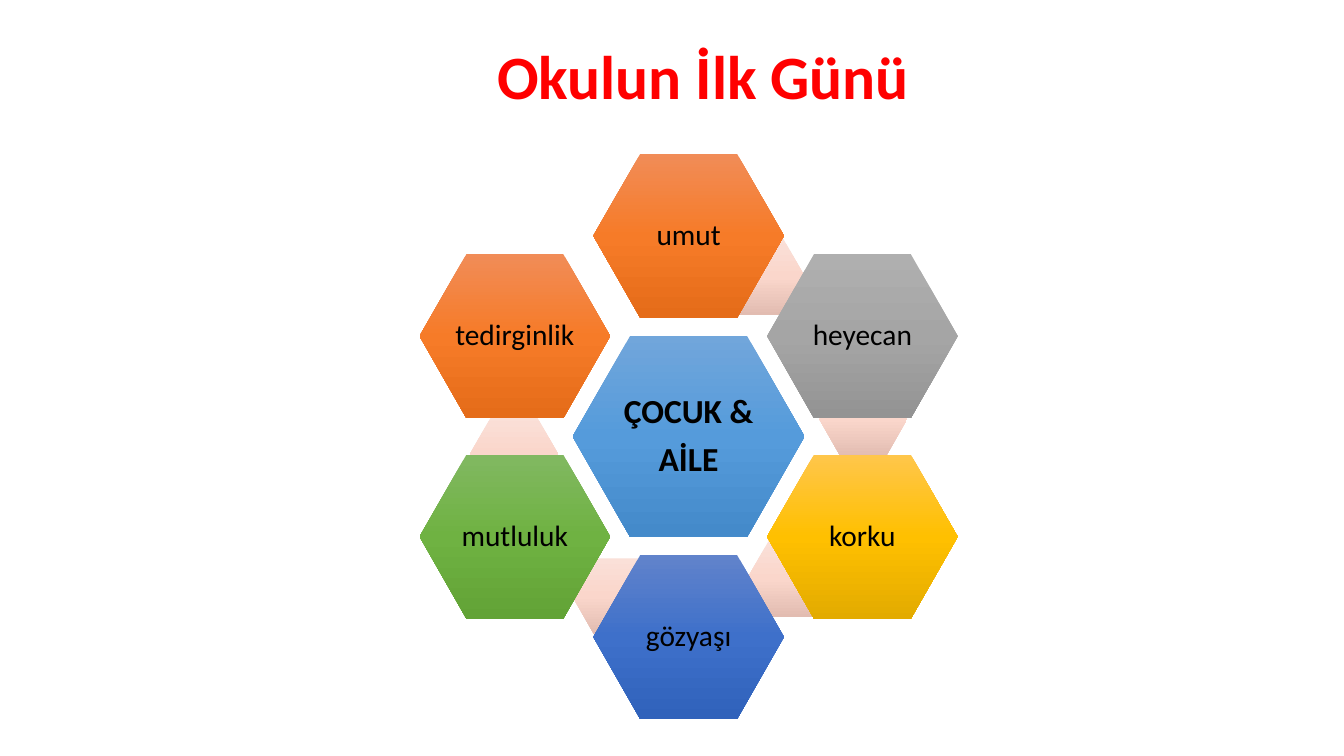
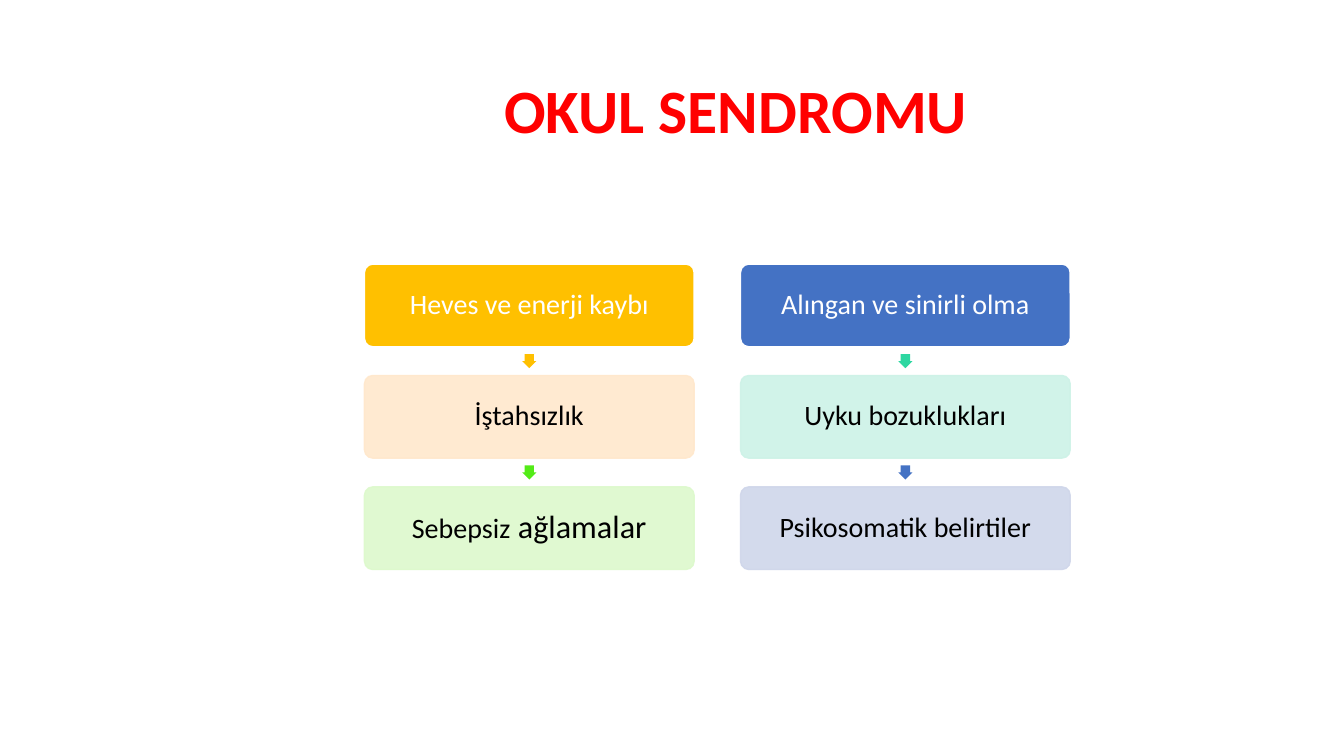
from copy import deepcopy
from math import cos, radians, sin

from pptx import Presentation
from pptx.dml.color import RGBColor
from pptx.enum.shapes import MSO_SHAPE as SHAPE
from pptx.enum.text import MSO_ANCHOR, PP_ALIGN
from pptx.oxml.ns import qn
from pptx.util import Inches, Pt

FONT = "Calibri"
RED = RGBColor(0xFF, 0x00, 0x00)
BLACK = RGBColor(0x00, 0x00, 0x00)
WHITE = RGBColor(0xFF, 0xFF, 0xFF)
GOLD = RGBColor(0xFF, 0xC0, 0x00)
BLUE = RGBColor(0x44, 0x72, 0xC4)
LIME = RGBColor(0x53, 0xEB, 0x17)
MINT = RGBColor(0x2E, 0xD7, 0xA1)
PEACH = RGBColor(0xFF, 0xE8, 0xCC)
PALE_LIME = RGBColor(0xDD, 0xF9, 0xCC)
PALE_MINT = RGBColor(0xCD, 0xF2, 0xE7)
PALE_BLUE = RGBColor(0xCF, 0xD6, 0xEA)


def ramp(*codes):
    return [RGBColor.from_string(code) for code in codes]


SKY = ramp("71A6DB", "559BDB", "448ACA")
ORANGE = ramp("F18C57", "F67B28", "E56C19")
GREY = ramp("AFAFAF", "A5A5A5", "939393")
AMBER = ramp("FFC64B", "FFC000", "E3AB00")
NAVY = ramp("6183CB", "3E70CA", "3062BB")
GREEN = ramp("81B861", "6FB242", "62A336")
PINK = ramp("FAE0D8", "FAD6CB", "E2BCB1")

# Slide 1: the core and, clockwise from the top, its ring
DAY = "Okulun İlk Günü"
CORE = ["ÇOCUK &", "AİLE"]
RING = [("umut", ORANGE), ("heyecan", GREY), ("korku", AMBER),
        ("gözyaşı", NAVY), ("mutluluk", GREEN), ("tedirginlik", ORANGE)]
MID = (6.83, 4.33)
RADIUS, LINK_RADIUS, LINK_TURN = 1.99, 1.74, 24.4
CORE_SIZE, TILE_SIZE, LINK_SIZE = (2.3, 1.99), (1.89, 1.63), (0.87, 0.75)

# Slide 2: per column, cards (text runs, fill, text colour) and arrow colours
SYNDROME = "OKUL SENDROMU"
COLUMNS = [
    ([([("Heves ve enerji kaybı", 20)], GOLD, WHITE),
      ([("İştahsızlık", 20)], PEACH, BLACK),
      ([("Sebepsiz", 20), (" ağlamalar", 23)], PALE_LIME, BLACK)],
     [GOLD, LIME]),
    ([([("Alıngan ve sinirli olma", 20)], BLUE, WHITE),
      ([("Uyku bozuklukları", 20)], PALE_MINT, BLACK),
      ([("Psikosomatik belirtiler", 20)], PALE_BLUE, BLACK)],
     [MINT, BLUE]),
]
CARD = (3.27, 0.82)
FIRST = (5.25, 3.03)
STEP = (3.73, 1.105)
ARROW = 0.14


def add_page(deck, title, left, top, wide, high):
    page = deck.slides.add_slide(deck.slide_layouts[5])
    box = page.shapes.title
    box.left, box.top, box.width, box.height = map(
        Inches, (left, top, wide, high))
    box.text_frame.vertical_anchor = MSO_ANCHOR.MIDDLE
    write(box, [[(title, 44)]], RED, True, PP_ALIGN.LEFT)
    return page


def write(shape, lines, color, bold=False, align=PP_ALIGN.CENTER):
    """Fill a shape with lines, each a list of (text, size) runs."""
    frame = shape.text_frame
    for i, runs in enumerate(lines):
        para = frame.add_paragraph() if i else frame.paragraphs[0]
        para.alignment, para.line_spacing = align, 0.9
        font = para.font
        font.name, font.bold, font.color.rgb = FONT, bold, color
        font.size = Pt(runs[0][1])
        if i < len(lines) - 1:
            para.space_after = Pt(0.35 * runs[0][1])
        for text, size in runs:
            run = para.add_run()
            run.text = text
            if size != runs[0][1]:
                run.font.size = Pt(size)


def add_shape(page, kind, mid, size, *adjust):
    """Add a lineless shape centred on mid."""
    (x, y), (wide, high) = mid, size
    shape = page.shapes.add_shape(kind, *map(
        Inches, (x - wide / 2, y - high / 2, wide, high)))
    for i, value in enumerate(adjust):
        shape.adjustments[i] = value
    shape.shadow.inherit = False
    shape.line.fill.background()
    frame = shape.text_frame
    frame.word_wrap = True
    frame.vertical_anchor = MSO_ANCHOR.MIDDLE
    frame.margin_left = frame.margin_right = 0
    frame.margin_top = frame.margin_bottom = 0
    return shape


def add_hex(page, mid, size, colors):
    shape = add_shape(page, SHAPE.HEXAGON, mid, size, 0.286)
    fill = shape.fill
    fill.gradient()
    fill.gradient_angle = 270
    stops = next(shape._element.iter(qn("a:gsLst")))
    stops.insert(1, deepcopy(stops[0]))
    for i, (stop, color) in enumerate(zip(fill.gradient_stops, colors)):
        stop.position, stop.color.rgb = i / 2, color
    return shape


def polar(radius, turn):
    """Point at a clockwise turn, in degrees, from the top of the ring."""
    angle = radians(turn)
    return MID[0] + radius * sin(angle), MID[1] - radius * cos(angle)


def add_card(page, mid, runs, tint, ink):
    card = add_shape(page, SHAPE.ROUNDED_RECTANGLE, mid, CARD, 0.1)
    card.fill.solid()
    card.fill.fore_color.rgb = tint
    card.line.width = Pt(1)
    card.line.color.rgb = WHITE if ink == WHITE else tint
    if ink != WHITE:
        for color in card._element.spPr.iter(qn("a:srgbClr")):
            alpha = color.makeelement(qn("a:alpha"), {"val": "90000"})
            color.append(alpha)
    write(card, [runs], ink)


def draw_ring(page):
    core = add_hex(page, MID, CORE_SIZE, SKY)
    write(core, [[(line, 24)] for line in CORE], BLACK, True)
    for i, (word, colors) in enumerate(RING):
        turn = i * 360 / len(RING)
        if i < len(RING) - 1:
            add_hex(page, polar(LINK_RADIUS, turn + LINK_TURN),
                    LINK_SIZE, PINK)
        tile = add_hex(page, polar(RADIUS, turn), TILE_SIZE, colors)
        write(tile, [[(word, 21)]], BLACK)


def draw_columns(page):
    for col, (cards, arrows) in enumerate(COLUMNS):
        x = FIRST[0] + col * STEP[0]
        for row, card in enumerate(cards):
            add_card(page, (x, FIRST[1] + row * STEP[1]), *card)
        for row, color in enumerate(arrows):
            mid = x, FIRST[1] + (row + 0.5) * STEP[1]
            arrow = add_shape(page, SHAPE.DOWN_ARROW, mid,
                              (ARROW, ARROW), 0.667, 0.5)
            arrow.fill.solid()
            arrow.fill.fore_color.rgb = color


def main():
    deck = Presentation()
    deck.slide_width, deck.slide_height = Inches(13.33), Inches(7.5)
    draw_ring(add_page(deck, DAY, 4.83, 0.37, 8.5, 0.83))
    draw_columns(add_page(deck, SYNDROME, 4.9, 0.4, 7.52, 1.45))
    deck.save("out.pptx")


if __name__ == "__main__":
    main()
